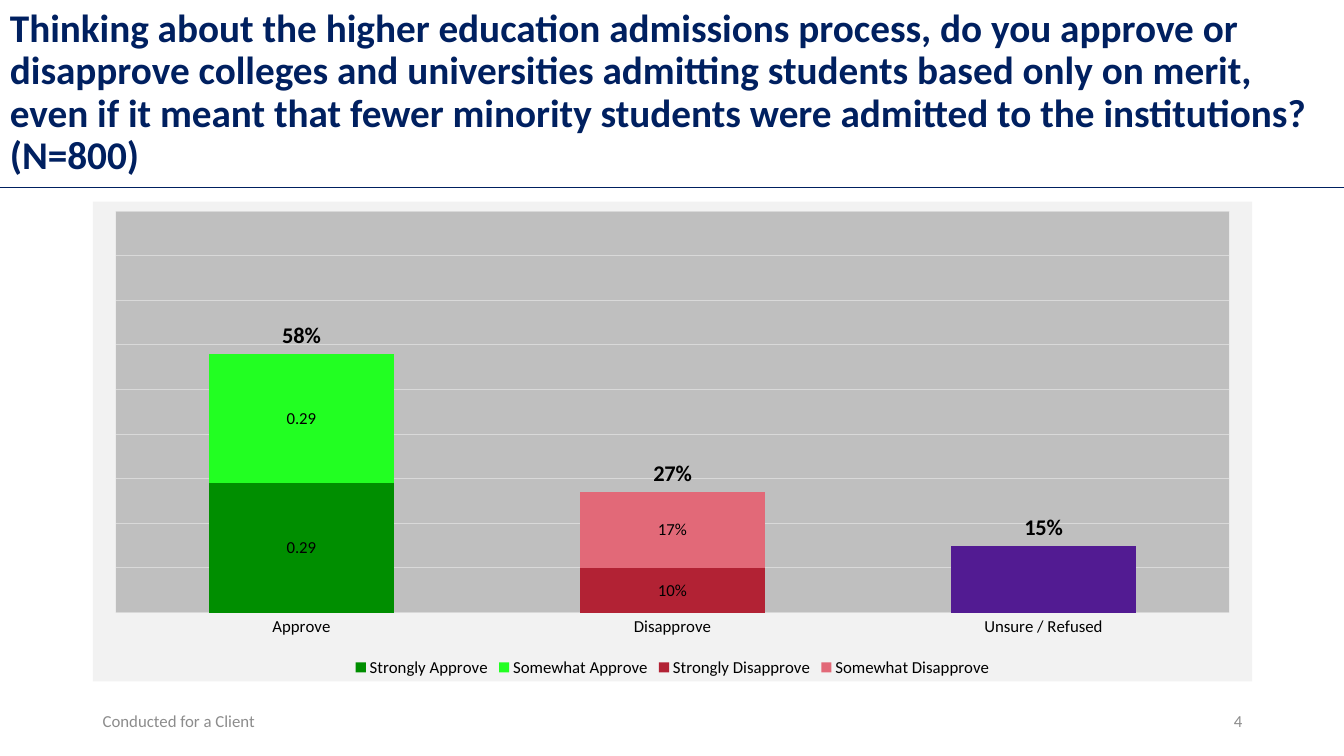
from lxml import etree
from pptx import Presentation
from pptx.chart.data import CategoryChartData
from pptx.dml.color import RGBColor
from pptx.enum.chart import XL_CHART_TYPE, XL_LABEL_POSITION, XL_LEGEND_POSITION, XL_TICK_MARK
from pptx.enum.shapes import MSO_CONNECTOR
from pptx.enum.text import MSO_ANCHOR, PP_ALIGN
from pptx.oxml import parse_xml
from pptx.oxml.ns import nsdecls, qn
from pptx.util import Inches, Pt

STACKED = XL_CHART_TYPE.COLUMN_STACKED
CENTER = XL_LABEL_POSITION.CENTER
INSIDE_BASE = XL_LABEL_POSITION.INSIDE_BASE
LEGEND_BOTTOM = XL_LEGEND_POSITION.BOTTOM
NO_TICKS = XL_TICK_MARK.NONE
STRAIGHT = MSO_CONNECTOR.STRAIGHT
MIDDLE = MSO_ANCHOR.MIDDLE
LEFT, RIGHT = PP_ALIGN.LEFT, PP_ALIGN.RIGHT

FONT = "Calibri"
COLORS = {
    "navy": "002060",
    "footer": "8C8C8C",
    "text": "000000",
    "grid": "D9D9D9",
    "chart": "F2F2F2",
    "plot": "BFBFBF",
    "strong_approve": "008E00",
    "some_approve": "22FF22",
    "strong_disapprove": "B22234",
    "some_disapprove": "E26978",
    "unsure": "521B92",
}
QUESTION = (
    "Thinking about the higher education admissions process, do you approve or "
    "disapprove colleges and universities admitting students based only on merit, "
    "even if it meant that fewer minority students were admitted to the "
    "institutions? (N=800)"
)
CATEGORIES = ["Approve", "Disapprove", "Unsure / Refused"]
ANSWERS = [
    ("Strongly Approve", (0.29, None, None), "strong_approve", "General"),
    ("Somewhat Approve", (0.29, None, None), "some_approve", "General"),
    ("Strongly Disapprove", (None, 0.1, None), "strong_disapprove", "0%"),
    ("Somewhat Disapprove", (None, 0.17, None), "some_disapprove", "0%"),
    ("Series 5", (None, None, 0.15), "unsure", None),
]
TOTALS = ("Series 6", (0.58, 0.27, 0.15))
LEGEND_HIDDEN = (4, 5)


def rgb(name):
    return RGBColor.from_string(COLORS[name])


def style_font(font, size, color="text", bold=False):
    font.name = FONT
    font.size = Pt(size)
    font.bold = bold
    font.color.rgb = rgb(color)


def add_text(slide, text, box, size, color, bold=False, align=LEFT, spacing=1.0):
    frame = slide.shapes.add_textbox(*map(Inches, box)).text_frame
    frame.word_wrap = True
    frame.vertical_anchor = MIDDLE
    paragraph = frame.paragraphs[0]
    paragraph.text = text
    paragraph.alignment = align
    paragraph.line_spacing = spacing
    style_font(paragraph.font, size, color, bold)


def add_rule(slide, top):
    rule = slide.shapes.add_connector(
        STRAIGHT, Inches(0), Inches(top), Inches(13.33), Inches(top)
    )
    rule.line.color.rgb = rgb("navy")
    rule.line.width = Pt(0.5)
    etree.SubElement(rule._element.spPr, qn("a:effectLst"))


def area_fill(color):
    return parse_xml(
        f'<c:spPr {nsdecls("c", "a")}><a:solidFill><a:srgbClr val="{COLORS[color]}"/>'
        "</a:solidFill><a:ln><a:noFill/></a:ln></c:spPr>"
    )


def label_series(series, position, number_format, size, bold=False):
    labels = series.data_labels
    labels.show_value = True
    labels.position = position
    labels.number_format = number_format
    labels.number_format_is_linked = False
    style_font(labels.font, size, bold=bold)


def style_grid_line(line):
    line.color.rgb = rgb("grid")
    line.width = Pt(0.75)


def style_axes(chart):
    answers = chart.category_axis
    answers.major_tick_mark = NO_TICKS
    answers.minor_tick_mark = NO_TICKS
    style_font(answers.tick_labels.font, 12)
    style_grid_line(answers.format.line)
    share = chart.value_axis
    share.minimum_scale = 0
    share.maximum_scale = 0.9
    share.has_major_gridlines = True
    style_grid_line(share.major_gridlines.format.line)
    share.visible = False


def add_legend(chart):
    chart.has_legend = True
    legend = chart.legend
    legend.position = LEGEND_BOTTOM
    legend.include_in_layout = False
    style_font(legend.font, 12)
    for offset, index in enumerate(LEGEND_HIDDEN, start=1):
        legend._element.insert(offset, parse_xml(
            f'<c:legendEntry {nsdecls("c")}><c:idx val="{index}"/>'
            '<c:delete val="1"/></c:legendEntry>'
        ))


def add_results_chart(slide, box):
    results = CategoryChartData()
    results.categories = CATEGORIES
    for name, values, *_ in ANSWERS:
        results.add_series(name, values)
    results.add_series(*TOTALS)
    chart = slide.shapes.add_chart(STACKED, *map(Inches, box), results).chart
    chart.has_title = False
    style_font(chart.font, 10)

    plot = chart.plots[0]
    plot.gap_width = 100
    plot.overlap = 100
    plot.vary_by_categories = False
    *answers, totals = plot.series
    for series, (_, _, color, number_format) in zip(answers, ANSWERS):
        series.format.fill.solid()
        series.format.fill.fore_color.rgb = rgb(color)
        if number_format:
            label_series(series, CENTER, number_format, 12)
    totals.format.fill.background()
    label_series(totals, INSIDE_BASE, "0%", 16, bold=True)

    style_axes(chart)
    add_legend(chart)
    chart_body = chart._chartSpace.find(qn("c:chart"))
    chart_body.find(qn("c:plotArea")).append(area_fill("plot"))
    chart_body.addnext(area_fill("chart"))


def main():
    deck = Presentation()
    deck.slide_width = Inches(13.33)
    deck.slide_height = Inches(7.5)
    slide = deck.slides.add_slide(deck.slide_layouts[6])
    add_rule(slide, 1.86)
    add_text(slide, QUESTION, (0, 0.2, 13.33, 1.45), 28, "navy", bold=True, spacing=0.9)
    add_results_chart(slide, (0.92, 2, 11.5, 4.76))
    add_text(slide, "Conducted for a Client", (0.92, 6.95, 3, 0.4), 12, "footer")
    add_text(slide, "4", (9.42, 6.95, 3, 0.4), 12, "footer", align=RIGHT)
    deck.save("out.pptx")


if __name__ == "__main__":
    main()
